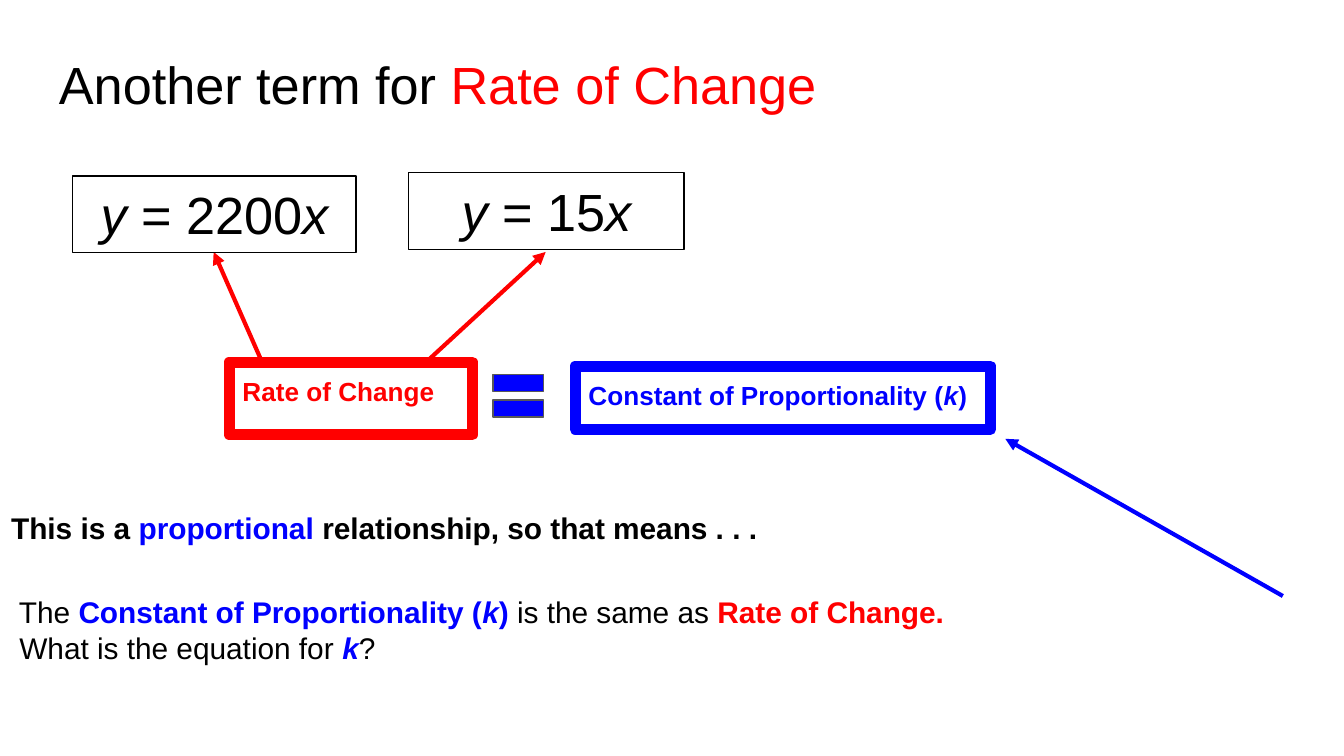
from dataclasses import dataclass

from lxml import etree
from pptx import Presentation
from pptx.dml.color import RGBColor
from pptx.enum.shapes import MSO_CONNECTOR, MSO_SHAPE
from pptx.enum.text import MSO_ANCHOR, PP_ALIGN
from pptx.oxml.ns import qn
from pptx.util import Pt

PX = 4572
RECT, EQUAL = MSO_SHAPE.RECTANGLE, MSO_SHAPE.MATH_EQUAL
STRAIGHT = MSO_CONNECTOR.STRAIGHT
TOP = MSO_ANCHOR.TOP
LEFT, CENTER = PP_ALIGN.LEFT, PP_ALIGN.CENTER


@dataclass(frozen=True)
class Theme:
    font: str = "Arial"
    black: str = "000000"
    red: str = "FF0000"
    blue: str = "0000FF"
    gray: str = "595959"
    large: int = 28
    body: int = 16
    label: int = 14
    thin: float = 0.75
    arrow: float = 2.25
    thick: int = 6


THEME = Theme()


def color(code):
    return RGBColor.from_string(code)


def scale(*sizes):
    return [size * PX for size in sizes]


def write(par, text, size=THEME.body, ink=THEME.black, bold=False, italic=False):
    run = par.add_run()
    run.text = text
    font = run.font
    font.name, font.size = THEME.font, Pt(size)
    font.bold, font.italic = bold, italic
    font.color.rgb = color(ink)


def frame(shape, rows, pad=(20, 20), align=LEFT, **style):
    text = shape.text_frame
    text.word_wrap = True
    text.vertical_anchor = TOP
    text.margin_left = text.margin_right = pad[0] * PX
    text.margin_top = text.margin_bottom = pad[1] * PX
    for index, row in enumerate(rows):
        par = text.add_paragraph() if index else text.paragraphs[0]
        par.alignment = align
        for words, marks in row:
            write(par, words, **{**style, **marks})


def text_box(slide, box, rows, **style):
    frame(slide.shapes.add_textbox(*scale(*box)), rows, **style)


def panel(slide, box, ink, width, kind=RECT, fill=None):
    shape = slide.shapes.add_shape(kind, *scale(*box))
    shape.shadow.inherit = False
    if fill:
        shape.fill.solid()
        shape.fill.fore_color.rgb = color(fill)
    else:
        shape.fill.background()
    shape.line.color.rgb = color(ink)
    shape.line.width = Pt(width)
    return shape


def arrow(slide, start, end, ink):
    line = slide.shapes.add_connector(STRAIGHT, *scale(*start, *end))
    line.line.color.rgb = color(ink)
    line.line.width = Pt(THEME.arrow)
    etree.SubElement(line.line._get_or_add_ln(), qn("a:tailEnd"), type="triangle")
    etree.SubElement(line._element.spPr, qn("a:effectLst"))


def title(slide, box):
    row = [("Another term for ", {}), ("Rate of Change", {"ink": THEME.red})]
    text_box(slide, box, [row], size=THEME.large)


def formula(slide, box, value):
    shape = panel(slide, box, THEME.black, THEME.thin)
    row = [("y", {"italic": True}), (f" = {value}", {}), ("x", {"italic": True})]
    frame(shape, [row], pad=(20, 10), align=CENTER, size=THEME.large)


def term(slide, box, row, ink):
    shape = panel(slide, box, ink, THEME.thick)
    frame(shape, [row], size=THEME.label, ink=ink, bold=True)


def terms(slide, box):
    x, y, wide, high = box
    arrow(slide, (x + 49, y), (x - 23, y - 164), THEME.red)
    arrow(slide, (x + 293, y), (x + 471, y - 164), THEME.red)
    term(slide, (x, y, 362, high), [("Rate of Change", {})], THEME.red)
    phrase = [("Constant of Proportionality (", {}), ("k", {"italic": True}), (")", {})]
    term(slide, (x + 515, y + 6, wide - 515, 94), phrase, THEME.blue)
    sign = panel(slide, (x + 379, y - 4, 102, high), THEME.gray, THEME.thin,
                 EQUAL, THEME.blue)
    sign.adjustments[0], sign.adjustments[1] = 0.235, 0.118
    arrow(slide, (x + 1568, y + 348), (x + 1155, y + 114), THEME.blue)


def notes(slide, box):
    x, y, wide, high = box
    blue = {"ink": THEME.blue, "bold": True}
    red = {"ink": THEME.red, "bold": True}
    key = {**blue, "italic": True}
    claim = [("This is a ", {}), ("proportional", blue),
             (" relationship, so that means . . .", {})]
    text_box(slide, (x, y, 1434, 94), [claim], bold=True)
    same = [(" The ", {}), ("Constant of Proportionality (", blue), ("k", key),
            (")", blue), (" is the same as ", {}), ("Rate of Change.", red)]
    ask = [(" What is the equation for ", {}), ("k", key), ("?", {})]
    text_box(slide, (x, y + 126, wide, high - 126), [same, ask])


def main():
    deck = Presentation()
    deck.slide_width, deck.slide_height = scale(2000, 1125)
    slide = deck.slides.add_slide(deck.slide_layouts[6])
    title(slide, (68, 58, 1864, 126))
    terms(slide, (341, 539, 1133, 108))
    notes(slide, (-3, 738, 1848, 332))
    formula(slide, (608, 257, 410, 114), 15)
    formula(slide, (108, 262, 422, 114), 2200)
    deck.save("out.pptx")


if __name__ == "__main__":
    main()
